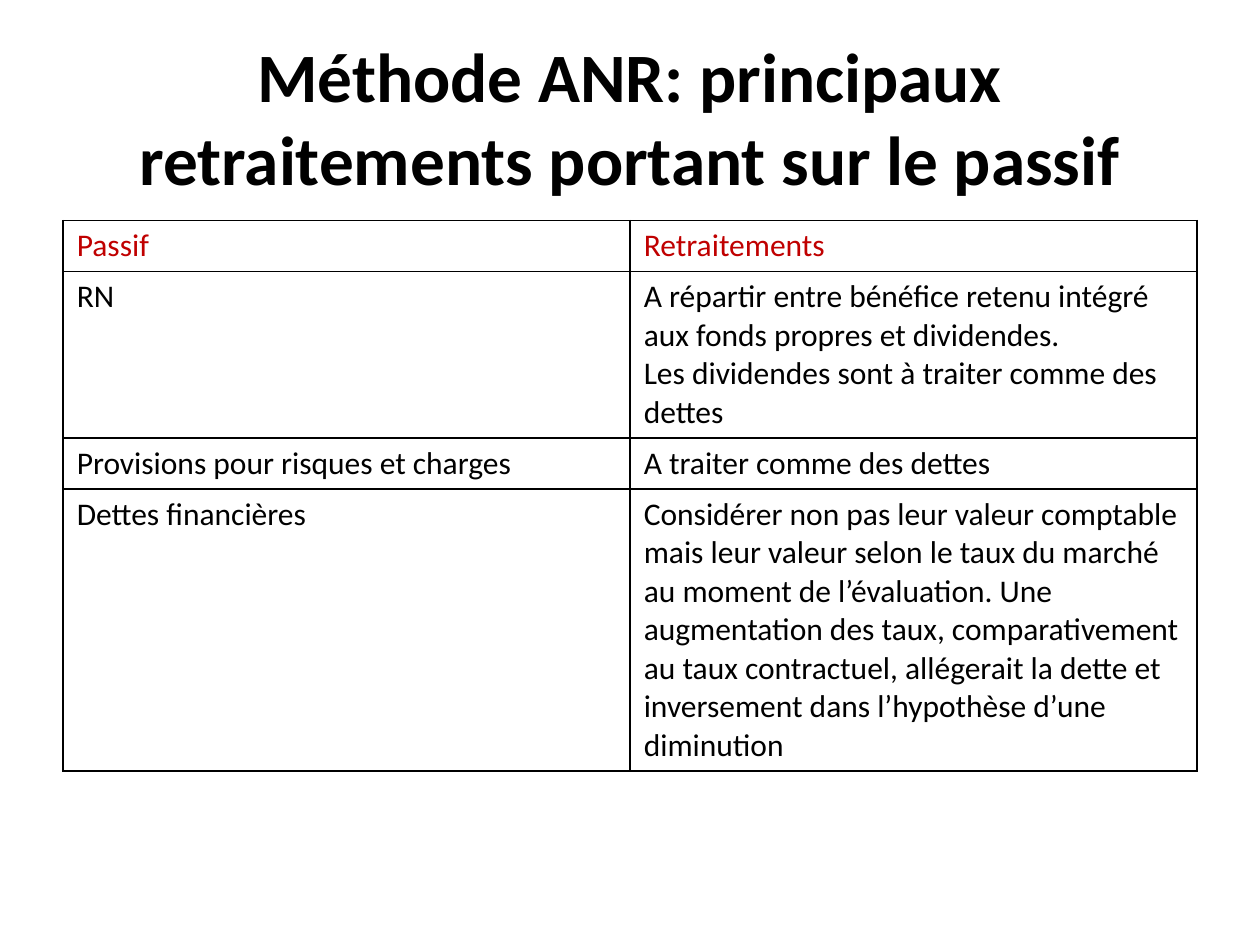
from lxml import etree
from pptx import Presentation
from pptx.dml.color import RGBColor
from pptx.enum import text
from pptx.oxml import ns
from pptx.util import Pt

COLOURS = {"ink": "000000", "heading": "C00000"}
TITLE = "Méthode ANR: principaux retraitements portant sur le passif"
ROWS = [
    (29.2, "Passif", "Retraitements"),
    (95, "RN",
     "A répartir entre bénéfice retenu intégré aux fonds propres et dividendes.\n"
     "Les dividendes sont à traiter comme des dettes"),
    (29.2, "Provisions pour risques et charges", "A traiter comme des dettes"),
    (161, "Dettes financières",
     "Considérer non pas leur valeur comptable mais leur valeur selon le taux "
     "du marché au moment de l’évaluation. Une augmentation des taux, "
     "comparativement au taux contractuel, allégerait la dette et inversement "
     "dans l’hypothèse d’une diminution"),
]
CELL_FORMAT = {
    "margin_left": Pt(7.9), "margin_right": Pt(7.9),
    "margin_top": Pt(3.6), "margin_bottom": Pt(3.6),
    "vertical_anchor": text.MSO_ANCHOR.TOP,
}
FRAME_FORMAT = {
    "word_wrap": True, "auto_size": text.MSO_AUTO_SIZE.NONE,
    "vertical_anchor": text.MSO_ANCHOR.MIDDLE,
}


def set_all(target, values):
    for name, value in values.items():
        setattr(target, name, value)


def write(frame, words, size, colour, bold, align):
    frame.text = words
    for para in frame.paragraphs:
        para.alignment = align
        for span in para.runs:
            set_all(span.font, {"name": "Calibri", "size": Pt(size), "bold": bold})
            span.font.color.rgb = RGBColor.from_string(COLOURS[colour])


def add_borders(cell, width, colour):
    properties = cell._tc.get_or_add_tcPr()
    for index, side in enumerate(("lnL", "lnR", "lnT", "lnB")):
        line = etree.Element(ns.qn(f"a:{side}"), w=str(Pt(width)))
        fill = etree.SubElement(line, ns.qn("a:solidFill"))
        etree.SubElement(fill, ns.qn("a:srgbClr"), val=COLOURS[colour])
        properties.insert(index, line)


def add_title(page, left, top, width, height):
    box = page.shapes.add_textbox(Pt(left), Pt(top), Pt(width), Pt(height))
    set_all(box.text_frame, FRAME_FORMAT)
    write(box.text_frame, TITLE, 39.6, "ink", True, text.PP_ALIGN.CENTER)


def add_adjustments(page, left, top, width):
    height = sum(row[0] for row in ROWS)
    table = page.shapes.add_table(
        len(ROWS), 2, Pt(left), Pt(top), Pt(width), Pt(height)).table
    set_all(table, {"first_row": False, "horz_banding": False})
    for column in table.columns:
        column.width = Pt(width / 2)
    for row_index, (row_height, *entries) in enumerate(ROWS):
        table.rows[row_index].height = Pt(row_height)
        colour = "ink" if row_index else "heading"
        for column_index, words in enumerate(entries):
            cell = table.cell(row_index, column_index)
            set_all(cell, CELL_FORMAT)
            cell.fill.background()
            write(cell.text_frame, words, 18, colour, False, text.PP_ALIGN.LEFT)
            add_borders(cell, 1, "ink")


def main():
    deck = Presentation()
    set_all(deck, {"slide_width": Pt(720), "slide_height": Pt(540)})
    page = deck.slides.add_slide(deck.slide_layouts[6])
    add_title(page, 36, 21.6, 648, 90)
    add_adjustments(page, 36, 126, 648)
    deck.save("out.pptx")


if __name__ == "__main__":
    main()
